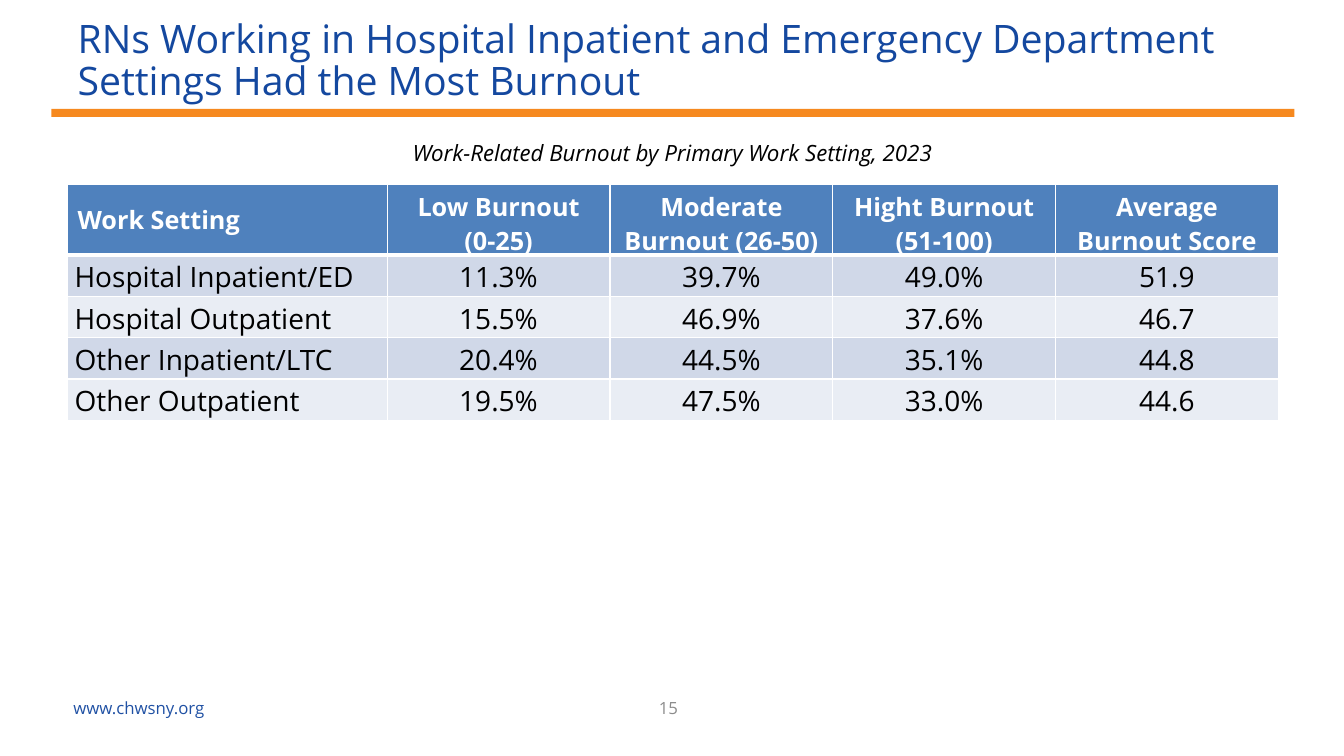
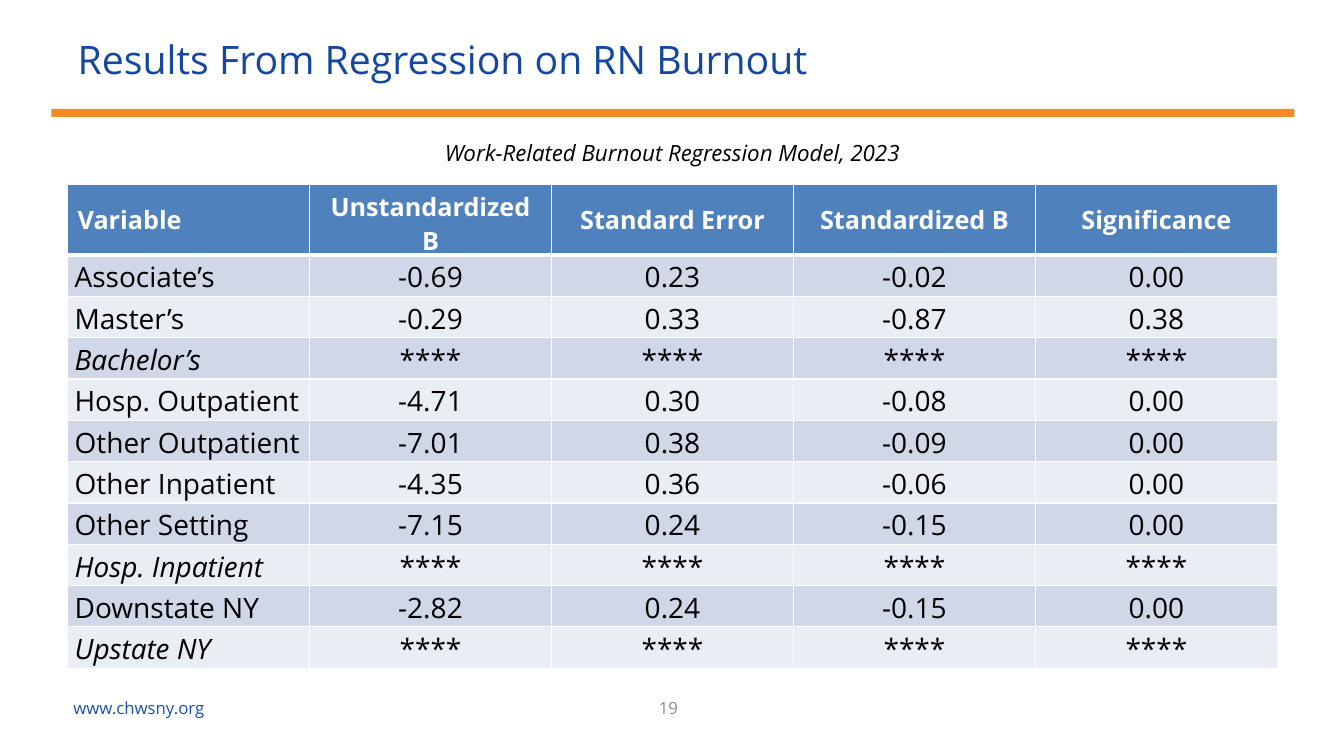
from lxml import etree
from pptx import Presentation
from pptx.dml.color import RGBColor
from pptx.enum.shapes import MSO_SHAPE
from pptx.enum.text import MSO_ANCHOR, MSO_AUTO_SIZE, PP_ALIGN
from pptx.oxml.ns import qn
from pptx.util import Inches, Pt

RECT = MSO_SHAPE.RECTANGLE
MIDDLE, TOP = MSO_ANCHOR.MIDDLE, MSO_ANCHOR.TOP
LEFT, CENTER = PP_ALIGN.LEFT, PP_ALIGN.CENTER
FONT = "Open Sans"
COLORS = {
    "title": "14489F", "band": "F6891F", "text": "000000",
    "head": "4F81BD", "odd": "D0D8E8", "even": "E9EDF4",
    "white": "FFFFFF", "page": "8C8C8C", "site": "2051A4",
}
EDGES = ("lnL", "lnR", "lnT", "lnB")
HEAD_H, ROW_H = 0.7, 0.41
STARS = ["****"] * 4

SLIDES = [
    {
        "title": "RNs Working in Hospital Inpatient and Emergency "
                 "Department Settings Had the Most Burnout",
        "note": "Work-Related Burnout by Primary Work Setting, 2023",
        "page": 15,
        "widths": [3.17] + [2.21] * 4,
        "rows": [
            ["Work Setting", "Low Burnout\n(0-25)",
             "Moderate Burnout (26-50)", "Hight Burnout (51-100)",
             "Average Burnout Score"],
            ["Hospital Inpatient/ED", "11.3%", "39.7%", "49.0%", "51.9"],
            ["Hospital Outpatient", "15.5%", "46.9%", "37.6%", "46.7"],
            ["Other Inpatient/LTC", "20.4%", "44.5%", "35.1%", "44.8"],
            ["Other Outpatient", "19.5%", "47.5%", "33.0%", "44.6"],
        ],
    },
    {
        "title": "Results From Regression on RN Burnout",
        "note": "Work-Related Burnout Regression Model, 2023",
        "page": 19,
        "widths": [2.4] * 5,
        "rows": [
            ["Variable", "Unstandardized B", "Standard Error",
             "Standardized B", "Significance"],
            ["Associate’s", "-0.69", "0.23", "-0.02", "0.00"],
            ["Master’s", "-0.29", "0.33", "-0.87", "0.38"],
            ["Bachelor’s", *STARS],
            ["Hosp. Outpatient", "-4.71", "0.30", "-0.08", "0.00"],
            ["Other Outpatient", "-7.01", "0.38", "-0.09", "0.00"],
            ["Other Inpatient", "-4.35", "0.36", "-0.06", "0.00"],
            ["Other Setting", "-7.15", "0.24", "-0.15", "0.00"],
            ["Hosp. Inpatient", *STARS],
            ["Downstate NY", "-2.82", "0.24", "-0.15", "0.00"],
            ["Upstate NY", *STARS],
        ],
    },
]


def paint(fill, color):
    fill.solid()
    fill.fore_color.rgb = RGBColor.from_string(COLORS[color])


def write(frame, text, size, color, align=LEFT, bold=False, italic=False,
          line=None):
    frame.text = text
    for para in frame.paragraphs:
        para.alignment = align
        if line:
            para.line_spacing = line
        font = para.font
        font.name, font.size = FONT, Pt(size)
        font.bold, font.italic = bold, italic
        font.color.rgb = RGBColor.from_string(COLORS[color])


def add_title(slide, text):
    title = slide.shapes.title
    title.left, title.top = Inches(0.67), Inches(0.13)
    title.width, title.height = Inches(12), Inches(0.96)
    frame = title.text_frame
    frame.auto_size = MSO_AUTO_SIZE.NONE
    frame.vertical_anchor = MIDDLE
    write(frame, text, 28, "title", line=0.9)


def add_band(slide):
    """Draw the rule under the title, behind its text."""
    band = slide.shapes.add_shape(
        RECT, Inches(0.51), Inches(1.08), Inches(12.33), Inches(0.08))
    band.shadow.inherit = False
    paint(band.fill, "band")
    band.line.fill.background()
    slide.shapes.title.element.addprevious(band.element)


def add_text(slide, box, text, size, color, anchor=MIDDLE, **style):
    frame = slide.shapes.add_textbox(*map(Inches, box)).text_frame
    frame.word_wrap = True
    frame.vertical_anchor = anchor
    write(frame, text, size, color, **style)
    return frame


def add_note(slide, text):
    frame = add_text(slide, (0.67, 1.31, 12, 0.38), text, 16, "text", TOP,
                     align=CENTER, italic=True, line=1.07)
    frame.paragraphs[0].space_after = Pt(8)


def add_foot(slide, page):
    add_text(slide, (5.13, 6.82, 3, 0.4), str(page), 12, "page",
             align=CENTER)
    add_text(slide, (0.63, 6.82, 4.37, 0.4), "www.chwsny.org", 12, "site")


def set_edges(cell, base):
    """Give a cell white borders, with the bottom one base points wide."""
    props = cell._tc.get_or_add_tcPr()
    for edge in EDGES:
        width = base if edge == "lnB" else 1
        line = etree.SubElement(props, qn("a:" + edge), w=str(Pt(width)))
        fill = etree.SubElement(line, qn("a:solidFill"))
        etree.SubElement(fill, qn("a:srgbClr"), val=COLORS["white"])


def fill_cell(cell, text, row, col, italic):
    head = row == 0
    align = CENTER if col else LEFT
    set_edges(cell, 3 if head else 1)
    cell.vertical_anchor = MIDDLE
    if head:
        paint(cell.fill, "head")
        write(cell.text_frame, text, 18, "white", align, bold=True)
    else:
        paint(cell.fill, "odd" if row % 2 else "even")
        cell.margin_left = cell.margin_right = Inches(0.07)
        cell.margin_top = cell.margin_bottom = 0
        write(cell.text_frame, text, 20, "text", align, italic=italic,
              line=1.07)


def add_grid(slide, rows, widths):
    high = HEAD_H + ROW_H * (len(rows) - 1)
    table = slide.shapes.add_table(
        len(rows), len(widths), Inches(0.67), Inches(1.83),
        Inches(sum(widths)), Inches(high)).table
    for col, width in zip(table.columns, widths):
        col.width = Inches(width)
    for r, values in enumerate(rows):
        table.rows[r].height = Inches(ROW_H if r else HEAD_H)
        base_case = values[1:] == STARS
        for c, text in enumerate(values):
            fill_cell(table.cell(r, c), text, r, c, base_case and c == 0)


def main():
    deck = Presentation()
    deck.slide_width, deck.slide_height = Inches(13.33), Inches(7.5)
    for data in SLIDES:
        slide = deck.slides.add_slide(deck.slide_layouts[5])
        add_title(slide, data["title"])
        add_band(slide)
        add_note(slide, data["note"])
        add_grid(slide, data["rows"], data["widths"])
        add_foot(slide, data["page"])
    deck.save("out.pptx")


if __name__ == "__main__":
    main()
